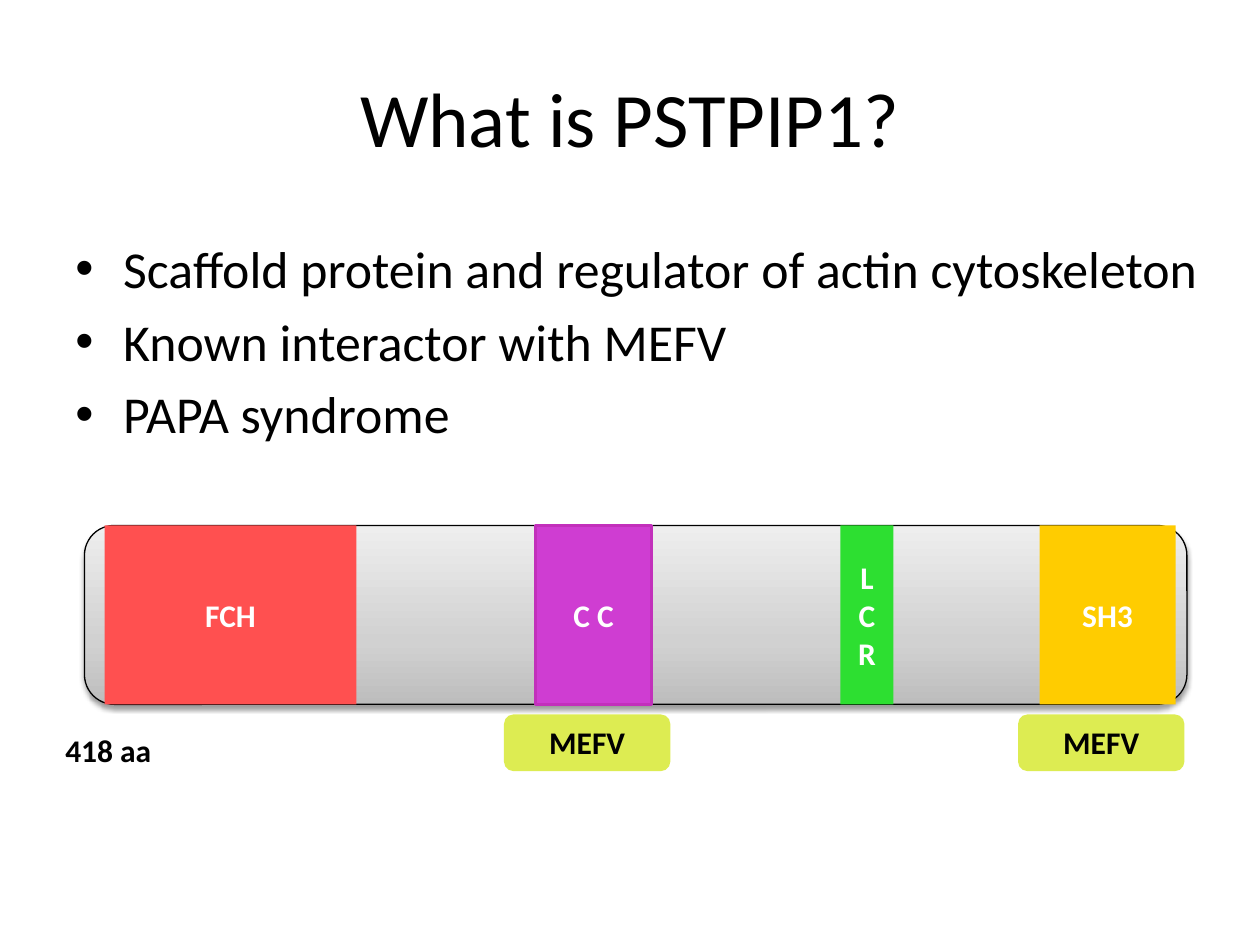
from copy import deepcopy

from lxml.etree import SubElement
from pptx import Presentation
from pptx.dml.color import RGBColor
from pptx.enum.shapes import MSO_SHAPE
from pptx.enum.text import MSO_ANCHOR, PP_ALIGN
from pptx.oxml.ns import qn
from pptx.util import Inches, Pt

COLORS = {
    "black": "000000", "white": "FFFFFF",
    "fch": "FF5050", "cc": "CF3DD2", "cc_edge": "C230BB",
    "lcr": "2DDF31", "sh3": "FFCC00", "mefv": "DDEC52",
}
PROTEIN_GRADIENT = [(0, "BDBDBD"), (0.35, "D1D1D1"), (1, "EEEEEE")]
PROTEIN_TOP, PROTEIN_HEIGHT = 4.17, 1.42
DOMAINS = [
    ("FCH", 0.83, 2, "fch", None),
    ("C C", 4.25, 0.92, "cc", "cc_edge"),
    ("LCR", 6.67, 0.42, "lcr", None),
    ("SH3", 8.25, 1.08, "sh3", None),
]
PARTNER_LEFTS = [4, 8.08]
FACTS = [
    "Scaffold protein and regulator of actin cytoskeleton",
    "Known interactor with MEFV",
    "PAPA syndrome",
]


def rgb(name):
    return RGBColor.from_string(COLORS[name])


def write(frame, lines, size, color="black", bold=False,
          align=PP_ALIGN.LEFT, anchor=MSO_ANCHOR.TOP):
    frame.word_wrap = True
    frame.vertical_anchor = anchor
    frame.text = "\n".join(lines)
    font_format = {"name": "Calibri", "size": Pt(size), "bold": bold}
    for paragraph in frame.paragraphs:
        paragraph.alignment = align
        font = paragraph.runs[0].font
        for attribute, value in font_format.items():
            setattr(font, attribute, value)
        font.color.rgb = rgb(color)


def add_text(slide, box, lines, size, **text_format):
    frame = slide.shapes.add_textbox(*map(Inches, box)).text_frame
    write(frame, lines, size, **text_format)
    return frame


def add_block(slide, kind, box, fill=None, edge=None, edge_width=0.75):
    block = slide.shapes.add_shape(kind, *map(Inches, box))
    block.shadow.inherit = False
    if fill:
        block.fill.solid()
        block.fill.fore_color.rgb = rgb(fill)
    if edge:
        block.line.color.rgb = rgb(edge)
        block.line.width = Pt(edge_width)
    else:
        block.line.fill.background()
    return block


def add_bullets(frame):
    for paragraph in frame.paragraphs:
        paragraph.space_before = Pt(6)
        properties = paragraph._p.get_or_add_pPr()
        properties.set("marL", str(Inches(0.38)))
        properties.set("indent", str(-Inches(0.38)))
        SubElement(properties, qn("a:buFont")).set("typeface", "Arial")
        SubElement(properties, qn("a:buChar")).set("char", "•")


def shade_protein(protein):
    protein.fill.gradient()
    protein.fill.gradient_angle = 90
    stop_list = protein._element.spPr.find(qn("a:gradFill")).find(qn("a:gsLst"))
    stop_list.insert(1, deepcopy(stop_list[0]))
    for stop, (position, color) in zip(protein.fill.gradient_stops, PROTEIN_GRADIENT):
        stop.position = position
        stop.color.rgb = RGBColor.from_string(color)


def cast_shadow(protein):
    effects = protein._element.spPr.find(qn("a:effectLst"))
    shadow = SubElement(effects, qn("a:outerShdw"), blurRad=str(Pt(3.1)),
                        dist=str(Pt(1.6)), dir="5400000", rotWithShape="0")
    color = SubElement(shadow, qn("a:srgbClr"), val=COLORS["black"])
    SubElement(color, qn("a:alpha"), val="38000")


def add_protein(slide):
    protein = add_block(slide, MSO_SHAPE.ROUNDED_RECTANGLE,
                        (0.67, PROTEIN_TOP, 8.75, PROTEIN_HEIGHT), edge="black")
    shade_protein(protein)
    cast_shadow(protein)


def add_domain(slide, label, left, width, fill, edge):
    domain = add_block(slide, MSO_SHAPE.RECTANGLE,
                       (left, PROTEIN_TOP, width, PROTEIN_HEIGHT), fill, edge, 2)
    write(domain.text_frame, [label], 18, "white", True,
          PP_ALIGN.CENTER, MSO_ANCHOR.MIDDLE)


def add_partner(slide, left):
    partner = add_block(slide, MSO_SHAPE.ROUNDED_RECTANGLE,
                        (left, 5.67, 1.32, 0.45), "mefv")
    write(partner.text_frame, ["MEFV"], 18, bold=True, align=PP_ALIGN.CENTER)


def main():
    deck = Presentation()
    deck.slide_width, deck.slide_height = Inches(10), Inches(7.5)
    slide = deck.slides.add_slide(deck.slide_layouts[6])
    add_text(slide, (0.5, 0.3, 9, 1.25), ["What is PSTPIP1?"], 44,
             align=PP_ALIGN.CENTER, anchor=MSO_ANCHOR.MIDDLE)
    add_bullets(add_text(slide, (0.5, 1.83, 9.5, 1.75), FACTS, 29.6))
    add_protein(slide)
    add_text(slide, (0.42, 5.75, 1.67, 0.4), ["418 aa"], 18, bold=True)
    for domain in DOMAINS:
        add_domain(slide, *domain)
    for left in PARTNER_LEFTS:
        add_partner(slide, left)
    deck.save("out.pptx")


if __name__ == "__main__":
    main()
